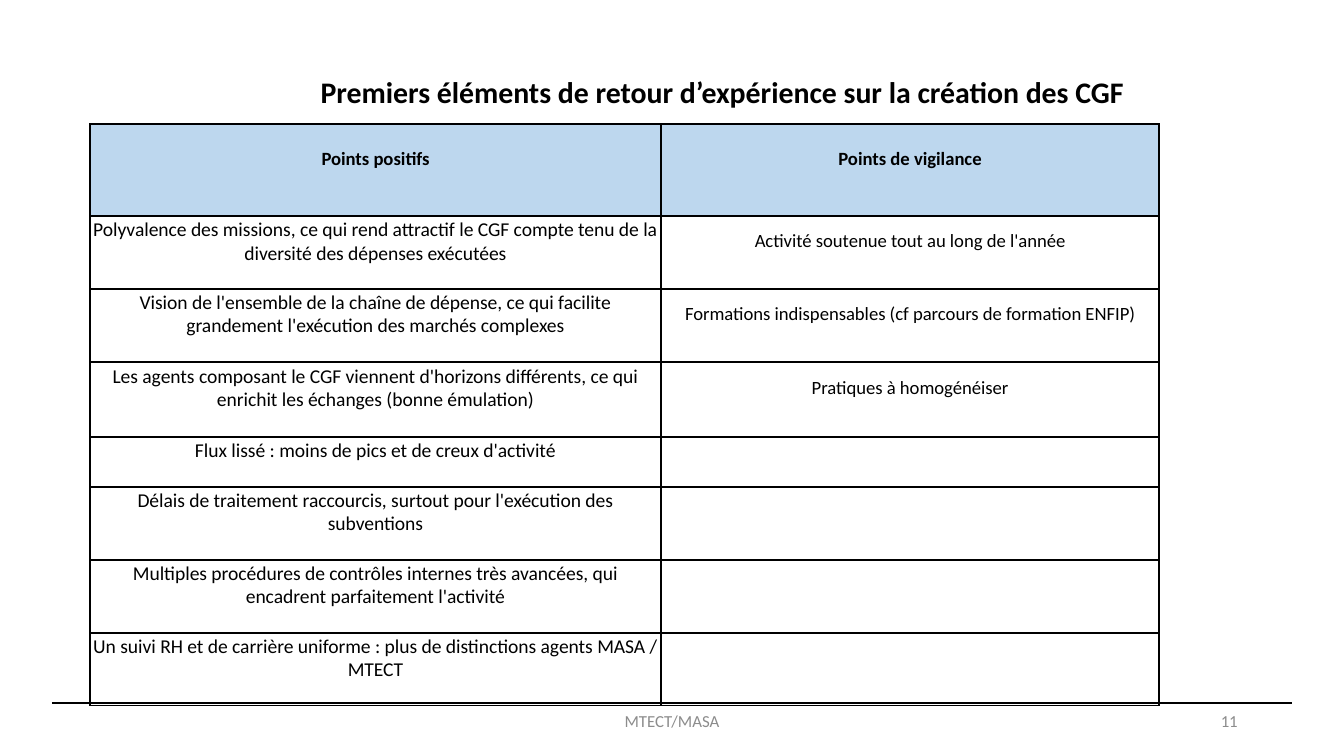
from dataclasses import dataclass

from lxml.etree import SubElement
from pptx import Presentation
from pptx.dml.color import RGBColor
from pptx.enum.shapes import MSO_CONNECTOR
from pptx.enum.text import MSO_ANCHOR, PP_ALIGN
from pptx.oxml.ns import qn
from pptx.util import Pt

TITLE = "Premiers éléments de retour d’expérience sur la création des CGF"
HEADERS = ("Points positifs", "Points de vigilance")
ROWS = [
    ("Polyvalence des missions, ce qui rend attractif le CGF compte tenu de la diversité des dépenses exécutées",
     "Activité soutenue tout au long de l'année"),
    ("Vision de l'ensemble de la chaîne de dépense, ce qui facilite grandement l'exécution des marchés complexes",
     "Formations indispensables (cf parcours de formation ENFIP)"),
    ("Les agents composant le CGF viennent d'horizons différents, ce qui enrichit les échanges (bonne émulation)",
     "Pratiques à homogénéiser"),
    ("Flux lissé : moins de pics et de creux d'activité", ""),
    ("Délais de traitement raccourcis, surtout pour l'exécution des subventions", ""),
    ("Multiples procédures de contrôles internes très avancées, qui encadrent parfaitement l'activité", ""),
    ("Un suivi RH et de carrière uniforme : plus de distinctions agents MASA / MTECT", ""),
]
FOOTER = "MTECT/MASA"
PAGE_NUMBER = "11"

COLUMN_WIDTHS = (571, 498)
ROW_HEIGHTS = (92, 73, 73, 75, 50, 73, 73, 73)
TABLE_LEFT, TABLE_TOP = 90, 124
CELL_MARGIN, CELL_BOTTOM = 1, 23


@dataclass(frozen=True)
class Theme:
    font: str = "Calibri"
    ink: str = "000000"
    muted: str = "8C8C8C"
    header_fill: str = "BDD7EE"
    title_size: float = 16
    header_size: float = 10
    column_sizes: tuple = (10.5, 10)
    footer_size: float = 9
    border: float = 1
    rule: float = 0.8


THEME = Theme()


def px(length):
    return round(length * 914400 / 134.4)


def write(frame, text, size, color, align, bold=False):
    frame.word_wrap = True
    paragraph = frame.paragraphs[0]
    paragraph.alignment = align
    run = paragraph.add_run()
    run.text = text
    run.font.name = THEME.font
    run.font.size = Pt(size)
    run.font.bold = bold
    run.font.color.rgb = RGBColor.from_string(color)
    return paragraph


def add_text(slide, box, text, size, color, align, bold=False):
    frame = slide.shapes.add_textbox(*map(px, box)).text_frame
    frame.vertical_anchor = MSO_ANCHOR.MIDDLE
    write(frame, text, size, color, align, bold)


def add_title(slide):
    frame = slide.shapes.add_textbox(px(259), px(78), px(927), px(56)).text_frame
    frame.margin_left = frame.margin_right = frame.margin_top = frame.margin_bottom = 0
    paragraph = write(frame, TITLE, THEME.title_size, THEME.ink, PP_ALIGN.CENTER, True)
    paragraph.line_spacing = 0.9


def add_rule(slide):
    line = slide.shapes.add_connector(MSO_CONNECTOR.STRAIGHT, px(52), px(703), px(1292), px(703))
    line.line.color.rgb = RGBColor.from_string(THEME.ink)
    line.line.width = Pt(THEME.rule)
    SubElement(line._element.spPr, qn("a:effectLst"))


def set_borders(cell):
    properties = cell._tc.get_or_add_tcPr()
    for position, side in enumerate(("lnL", "lnR", "lnT", "lnB")):
        border = SubElement(properties, qn(f"a:{side}"), w=str(Pt(THEME.border)))
        fill = SubElement(border, qn("a:solidFill"))
        SubElement(fill, qn("a:srgbClr"), val=THEME.ink)
        properties.insert(position, border)


def fill_cell(cell, text, size, is_header):
    cell.margin_left = cell.margin_right = cell.margin_top = cell.margin_bottom = px(CELL_MARGIN)
    cell.vertical_anchor = MSO_ANCHOR.MIDDLE
    if is_header:
        cell.fill.solid()
        cell.fill.fore_color.rgb = RGBColor.from_string(THEME.header_fill)
    else:
        cell.fill.background()
    set_borders(cell)
    if text:
        cell.margin_bottom = px(CELL_BOTTOM)
        write(cell.text_frame, text, size, THEME.ink, PP_ALIGN.CENTER, is_header)


def add_comparison(slide):
    content = [HEADERS, *ROWS]
    table = slide.shapes.add_table(
        len(content), len(HEADERS), px(TABLE_LEFT), px(TABLE_TOP),
        px(sum(COLUMN_WIDTHS)), px(sum(ROW_HEIGHTS))).table
    for column, width in zip(table.columns, COLUMN_WIDTHS):
        column.width = px(width)
    for row_index, (texts, height) in enumerate(zip(content, ROW_HEIGHTS)):
        table.rows[row_index].height = px(height)
        is_header = row_index == 0
        for column_index, text in enumerate(texts):
            size = THEME.header_size if is_header else THEME.column_sizes[column_index]
            fill_cell(table.cell(row_index, column_index), text, size, is_header)


def main():
    presentation = Presentation()
    presentation.slide_width, presentation.slide_height = px(1344), px(756)
    slide = presentation.slides.add_slide(presentation.slide_layouts[6])
    add_rule(slide)
    add_text(slide, (445, 701, 454, 40), FOOTER, THEME.footer_size, THEME.muted, PP_ALIGN.CENTER)
    add_text(slide, (949, 701, 302, 40), PAGE_NUMBER, THEME.footer_size, THEME.muted, PP_ALIGN.RIGHT)
    add_title(slide)
    add_comparison(slide)
    presentation.save("out.pptx")


if __name__ == "__main__":
    main()
